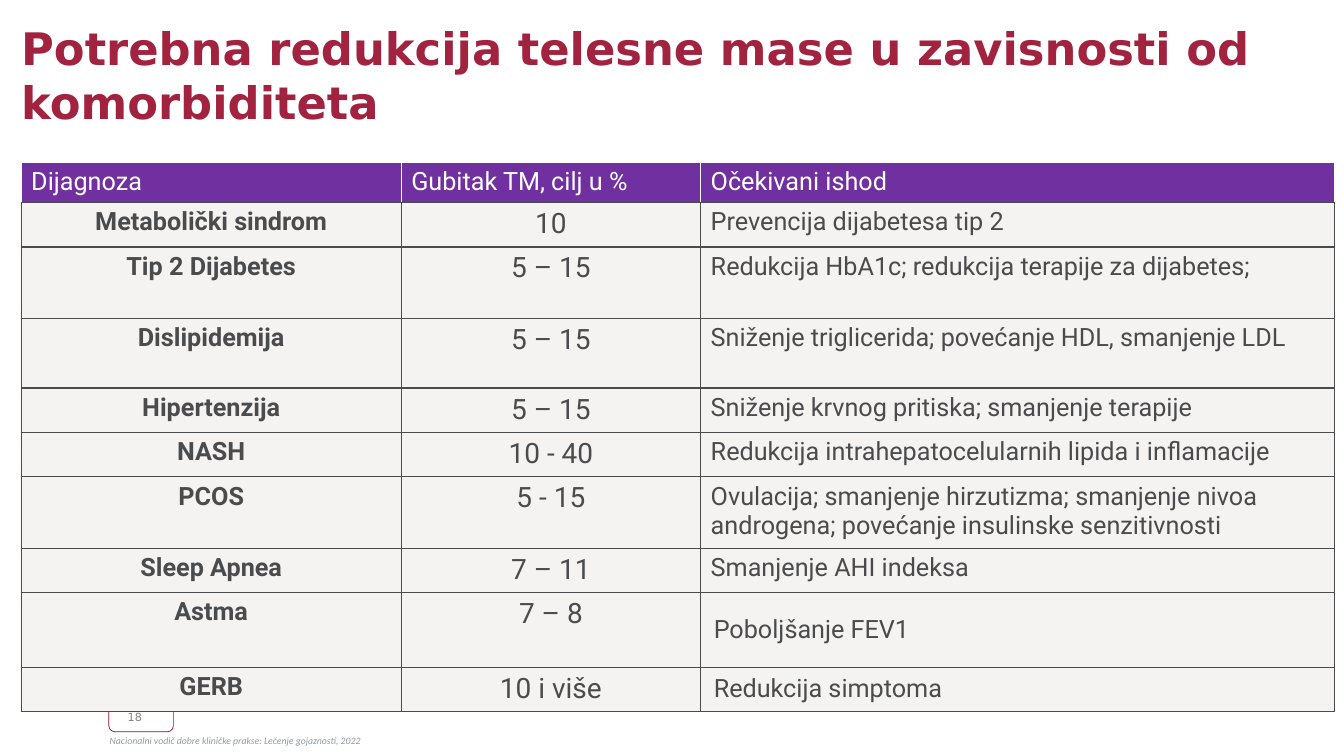
from lxml.etree import fromstring
from pptx import Presentation
from pptx.dml.color import RGBColor
from pptx.enum.shapes import MSO_SHAPE
from pptx.enum.text import MSO_ANCHOR, MSO_AUTO_SIZE, PP_ALIGN
from pptx.util import Inches, Pt

COLORS = {
    "title": "A12340", "header": "7030A0", "body": "F5F3F2", "text": "4A4B4D",
    "white": "FFFFFF", "badge": "AB0032", "number": "808080", "source": "939AA7",
}
TITLE = "Potrebna redukcija telesne mase u zavisnosti od komorbiditeta"
SOURCE = "Nacionalni vodič dobre kliničke prakse: Lečenje gojaznosti, 2022"
PAGE = "18"
HEADER = ("Dijagnoza", "Gubitak TM, cilj u %", "Očekivani ishod")
DIAGNOSES = [
    ("Metabolički sindrom", "10", "Prevencija dijabetesa tip 2"),
    ("Tip 2 Dijabetes", "5 – 15", "Redukcija HbA1c; redukcija terapije za dijabetes;"),
    ("Dislipidemija", "5 – 15", "Sniženje triglicerida; povećanje HDL, smanjenje LDL"),
    ("Hipertenzija", "5 – 15", "Sniženje krvnog pritiska; smanjenje terapije"),
    ("NASH", "10 - 40", "Redukcija intrahepatocelularnih lipida i inflamacije"),
    ("PCOS", "5 - 15", "Ovulacija; smanjenje hirzutizma; smanjenje nivoa androgena; "
     "povećanje insulinske senzitivnosti"),
    ("Sleep Apnea", "7 – 11", "Smanjenje AHI indeksa"),
    ("Astma", "7 – 8", "Poboljšanje FEV1"),
    ("GERB", "10 i više", "Redukcija simptoma"),
]
COL_WIDTHS = (3.77, 2.97, 6.29)
ROW_HEIGHTS = (0.4, 0.44, 0.71, 0.69, 0.44, 0.44, 0.71, 0.44, 0.74, 0.44)
COLUMN_FORMATS = (
    dict(size=18, bold=True, align=PP_ALIGN.CENTER),
    dict(size=20, align=PP_ALIGN.CENTER),
    dict(size=18),
)
MIDDLE_OUTCOMES = ("Poboljšanje FEV1", "Redukcija simptoma")
NS = "http://schemas.openxmlformats.org/drawingml/2006/main"


def rgb(name):
    return RGBColor.from_string(COLORS[name])


def write(tf, text, font="Roboto", size=18, color="text", bold=False,
          italic=False, align=PP_ALIGN.LEFT):
    p = tf.paragraphs[0]
    p.alignment = align
    r = p.add_run()
    r.text = text
    r.font.name, r.font.size = font, Pt(size)
    r.font.bold, r.font.italic = bold, italic
    r.font.color.rgb = rgb(color)


def set_margins(obj, left, top, right, bottom):
    obj.margin_left, obj.margin_top = Inches(left), Inches(top)
    obj.margin_right, obj.margin_bottom = Inches(right), Inches(bottom)


def set_borders(cell, sides):
    tcPr = cell._tc.get_or_add_tcPr()
    for i, (side, color) in enumerate(sides.items()):
        tcPr.insert(i, fromstring(
            f'<a:ln{side} xmlns:a="{NS}" w="12700"><a:solidFill>'
            f'<a:srgbClr val="{COLORS[color]}"/></a:solidFill></a:ln{side}>'))


def add_badge(s):
    sp = s.shapes.add_shape(MSO_SHAPE.ROUNDED_RECTANGLE, Inches(1.08), Inches(6.97),
                            Inches(0.64), Inches(0.29))
    sp.adjustments[0] = 0.208
    sp.shadow.inherit = False
    sp.fill.background()
    sp.line.color.rgb = rgb("badge")
    sp.line.width = Pt(0.5)
    tf = sp.text_frame
    tf.vertical_anchor = MSO_ANCHOR.MIDDLE
    set_margins(tf, 0.17, 0, 0, 0)
    write(tf, PAGE, font="DejaVu Sans", size=8, color="number")


def add_title(s):
    sp = s.shapes.title
    sp.left, sp.top = Inches(0.21), Inches(0.21)
    sp.width, sp.height = Inches(12.69), Inches(1.42)
    tf = sp.text_frame
    tf.auto_size = MSO_AUTO_SIZE.NONE
    tf.vertical_anchor = MSO_ANCHOR.TOP
    set_margins(tf, 0, 0, 0, 0)
    write(tf, TITLE, font="DejaVu Sans", size=32, color="title", bold=True)


def add_diagnosis_table(s):
    rows = [HEADER] + DIAGNOSES
    table = s.shapes.add_table(len(rows), len(HEADER), Inches(0.21), Inches(1.61),
                               Inches(sum(COL_WIDTHS)), Inches(sum(ROW_HEIGHTS))).table
    table.horz_banding = False
    for column, width in zip(table.columns, COL_WIDTHS):
        column.width = Inches(width)
    for i, (row, height) in enumerate(zip(rows, ROW_HEIGHTS)):
        table.rows[i].height = Inches(height)
        edge = "text" if i else "white"
        for j, text in enumerate(row):
            cell = table.cell(i, j)
            cell.fill.solid()
            cell.fill.fore_color.rgb = rgb("body" if i else "header")
            set_borders(cell, {"L": edge, "R": edge, "T": edge, "B": "text"})
            if text in MIDDLE_OUTCOMES:
                cell.vertical_anchor = MSO_ANCHOR.MIDDLE
                set_margins(cell, 0.13, 0.07, 0.13, 0.07)
            style = COLUMN_FORMATS[j] if i else dict(color="white")
            write(cell.text_frame, text, **style)


def add_source(s):
    sp = s.shapes.add_textbox(Inches(0.99), Inches(7.24), Inches(9.46), Inches(0.35))
    sp.text_frame.word_wrap = True
    write(sp.text_frame, SOURCE, font="Calibri", size=7, color="source", italic=True)


def main():
    prs = Presentation()
    prs.slide_width, prs.slide_height = Inches(13.33), Inches(7.5)
    s = prs.slides.add_slide(prs.slide_layouts[5])
    add_badge(s)
    add_title(s)
    add_diagnosis_table(s)
    add_source(s)
    prs.save("out.pptx")


if __name__ == "__main__":
    main()
